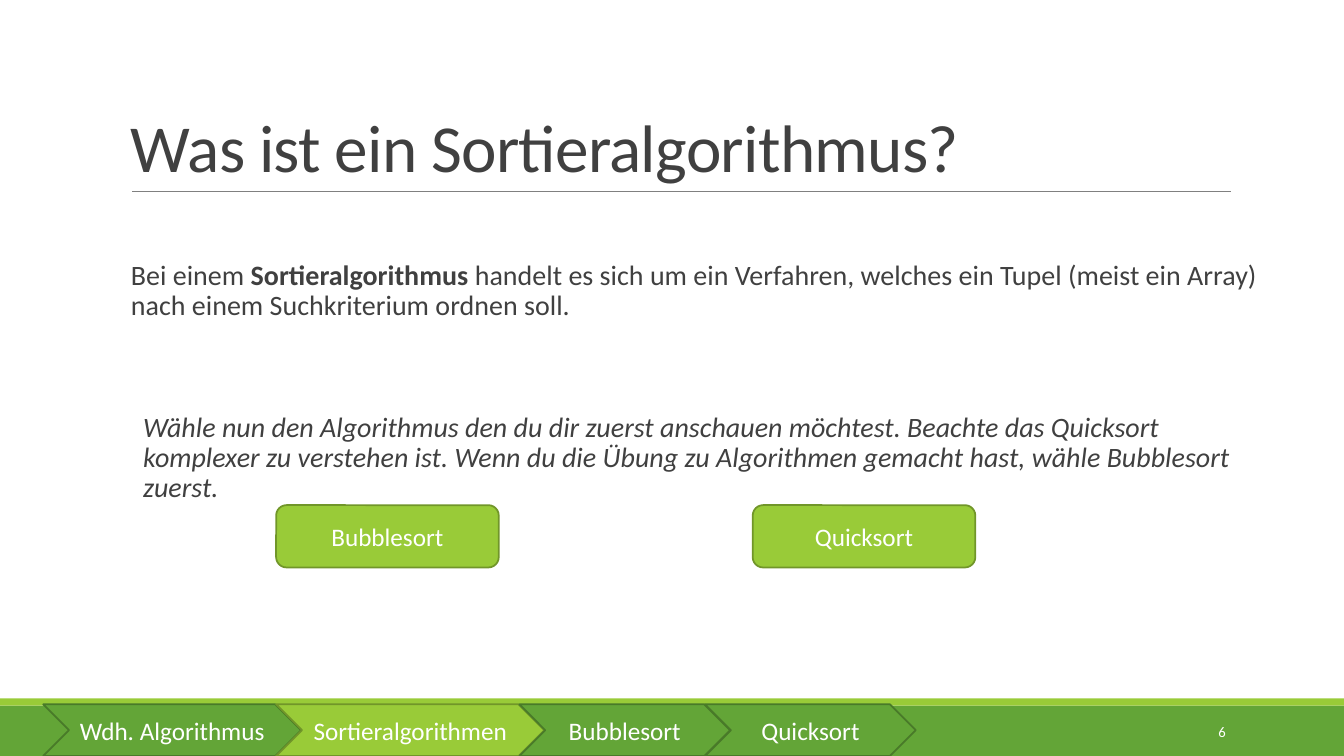
from lxml import etree
from pptx import Presentation
from pptx.dml.color import RGBColor
from pptx.enum import shapes, text
from pptx.oxml.ns import qn
from pptx.util import Cm, Pt

GREEN, LIME = "63A537", "99CB38"
DARK_GREEN, DARK_LIME = "497A29", "719629"
INK, WHITE, GREY = "404040", "FFFFFF", "808080"


def colour(value):
    return RGBColor.from_string(value)


def style(span, size, ink, bold=False, italic=False):
    span.font.name = "Calibri"
    span.font.size = Pt(size)
    span.font.color.rgb = colour(ink)
    span.font.bold = bold
    span.font.italic = italic


def add_block(page, kind, left, top, width, height, fill, line=None, label=""):
    block = page.shapes.add_shape(kind, Cm(left), Cm(top), Cm(width), Cm(height))
    block.shadow.inherit = False
    block.fill.solid()
    block.fill.fore_color.rgb = colour(fill)
    if line:
        block.line.color.rgb = colour(line)
        block.line.width = Pt(1.25)
    else:
        block.line.fill.background()
    if label:
        frame = block.text_frame
        frame.text = label
        frame.word_wrap = False
        frame.vertical_anchor = text.MSO_ANCHOR.MIDDLE
        para = frame.paragraphs[0]
        para.alignment = text.PP_ALIGN.CENTER
        style(para.runs[0], 18, WHITE)


def add_text(page, left, top, width, height, pieces, size, ink=INK,
             anchor=text.MSO_ANCHOR.TOP, spacing=0.9, inset=0.0):
    box = page.shapes.add_textbox(Cm(left), Cm(top), Cm(width), Cm(height))
    frame = box.text_frame
    frame.word_wrap = True
    frame.vertical_anchor = anchor
    frame.margin_left = frame.margin_right = Cm(inset)
    para = frame.paragraphs[0]
    para.line_spacing = spacing
    for wording, emphasis in pieces:
        span = para.add_run()
        span.text = wording
        style(span, size, ink, **emphasis)
    return para


def add_rule(page, left, right, top):
    rule = page.shapes.add_connector(
        shapes.MSO_CONNECTOR.STRAIGHT, Cm(left), Cm(top), Cm(right), Cm(top))
    rule.line.color.rgb = colour(GREY)
    rule.line.width = Pt(0.5)
    etree.SubElement(rule._element.spPr, qn("a:effectLst"))


def add_title(page, wording):
    para = add_text(page, 3.05, 0.79, 27.94, 4.04, [(wording, {})], 48,
                    anchor=text.MSO_ANCHOR.BOTTOM, spacing=0.85, inset=0.25)
    para.runs[0]._r.get_or_add_rPr().set("spc", "-50")


def add_navigation(page):
    steps = [("Wdh. Algorithmus", 6.5), ("Sortieralgorithmen", 6.76),
             ("Bubblesort", 5.31), ("Quicksort", 5.31)]
    left, overlap = 1.09, 0.63
    for label, width in steps:
        current = label == "Sortieralgorithmen"
        fill, line = (LIME, DARK_LIME) if current else (GREEN, DARK_GREEN)
        add_block(page, shapes.MSO_SHAPE.CHEVRON, left, 17.75, width, 1.3,
                  fill, line, label)
        left += width - overlap


def main():
    deck = Presentation()
    deck.slide_width, deck.slide_height = Cm(33.87), Cm(19.05)
    page = deck.slides.add_slide(deck.slide_layouts[6])

    add_block(page, shapes.MSO_SHAPE.RECTANGLE, 0, 17.78, 33.87, 1.27, GREEN)
    add_block(page, shapes.MSO_SHAPE.RECTANGLE, 0, 17.6, 33.87, 0.18, LIME)
    add_rule(page, 3.33, 31.01, 4.83)
    add_title(page, "Was ist ein Sortieralgorithmus?")

    add_text(page, 3.3, 6.45, 28.48, 1.9, [
        ("Bei einem ", {}),
        ("Sortieralgorithmus", {"bold": True}),
        (" handelt es sich um ein Verfahren, welches ein Tupel "
         "(meist ein Array) nach einem Suchkriterium ordnen soll.", {}),
    ], 20)
    add_text(page, 3.61, 10.28, 28.17, 2.6, [
        ("Wähle nun den Algorithmus den du dir zuerst anschauen möchtest. "
         "Beachte das Quicksort komplexer zu verstehen ist. Wenn du die Übung "
         "zu Algorithmen gemacht hast, wähle Bubblesort zuerst.",
         {"italic": True}),
    ], 20)
    number = add_text(page, 27.51, 17.93, 3.63, 1.02, [("6", {})], 10.5, WHITE,
                      text.MSO_ANCHOR.MIDDLE, 1.0, 0.25)
    number.alignment = text.PP_ALIGN.RIGHT

    for label, left in (("Bubblesort", 6.96), ("Quicksort", 18.97)):
        add_block(page, shapes.MSO_SHAPE.ROUNDED_RECTANGLE, left, 12.73,
                  5.61, 1.57, LIME, DARK_LIME, label)
    add_navigation(page)
    deck.save("out.pptx")


if __name__ == "__main__":
    main()
